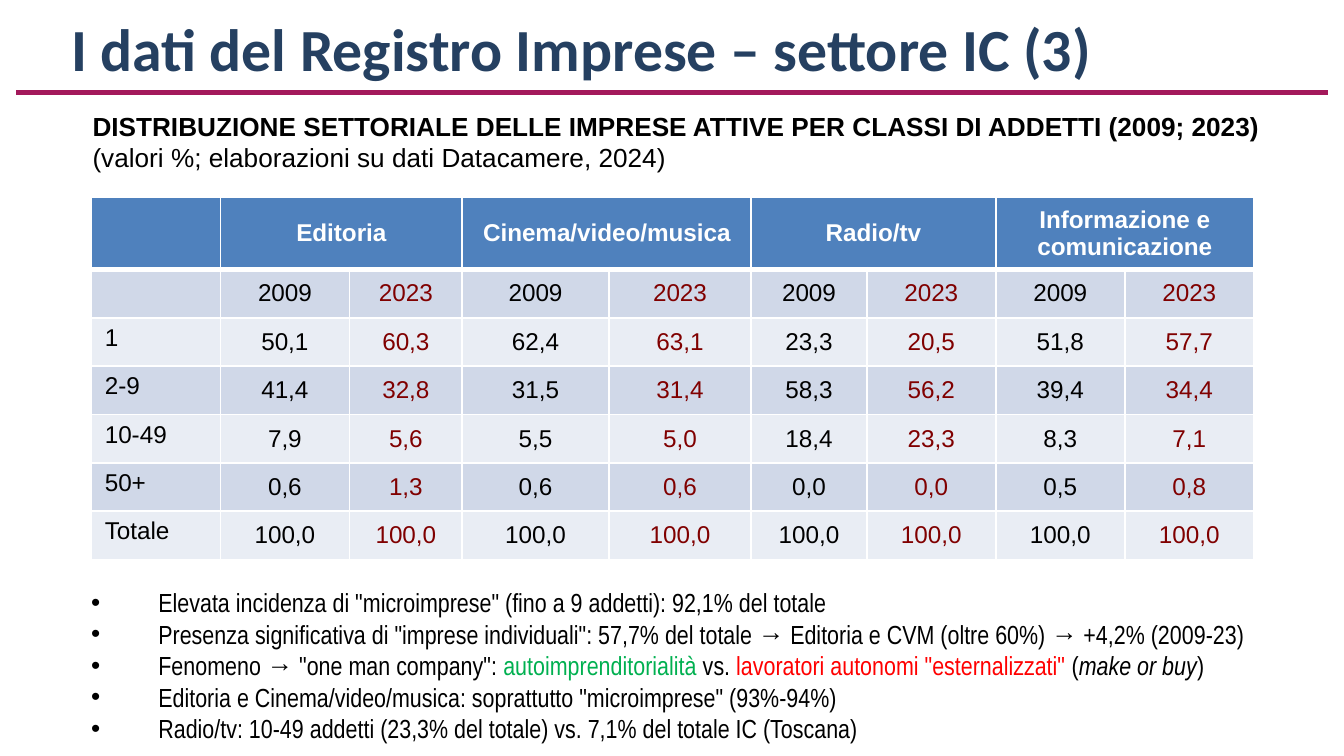
from lxml import etree
from pptx import Presentation
from pptx.dml.color import RGBColor
from pptx.enum.shapes import MSO_CONNECTOR
from pptx.enum.text import MSO_ANCHOR, PP_ALIGN
from pptx.oxml.ns import qn
from pptx.util import Inches, Pt

STRAIGHT = MSO_CONNECTOR.STRAIGHT
MIDDLE = MSO_ANCHOR.MIDDLE
CENTER = PP_ALIGN.CENTER

COLORS = {
    "title": "254061", "rule": "A3195B", "black": "000000", "white": "FFFFFF",
    "header": "4F81BD", "dark band": "D0D8E8", "light band": "E9EDF4",
    "2023": "800000", "green": "00B050", "red": "FF0000",
}


def add_span(para, text, size, font, color="black", bold=False, italic=False):
    span = para.add_run()
    span.text = text
    span.font.size = Pt(size)
    span.font.name = font
    span.font.bold = bold
    span.font.italic = italic
    span.font.color.rgb = RGBColor.from_string(COLORS[color])


def add_box(left, top, width, height):
    box = slide.shapes.add_textbox(Inches(left), Inches(top), Inches(width), Inches(height))
    box.text_frame.word_wrap = True
    return box.text_frame


# 16:9 deck
deck = Presentation()
deck.slide_width = Inches(10)
deck.slide_height = Inches(10 * 9 / 16)
slide = deck.slides.add_slide(deck.slide_layouts[6])

# Title and rule
rule = slide.shapes.add_connector(STRAIGHT, Inches(0.12), Inches(0.69), Inches(9.88), Inches(0.69))
rule.line.color.rgb = RGBColor.from_string(COLORS["rule"])
rule.line.width = Pt(2.5)
etree.SubElement(rule._element.spPr, qn("a:effectLst"))

title = add_box(0.43, 0.04, 9.29, 0.64)
add_span(title.paragraphs[0], "I dati del Registro Imprese – settore IC (3)", 32, "Calibri", "title", bold=True)

# Table heading
heading = add_box(0.59, 0.77, 8.98, 0.74)
add_span(heading.paragraphs[0],
         "DISTRIBUZIONE SETTORIALE DELLE IMPRESE ATTIVE PER CLASSI DI ADDETTI (2009; 2023)",
         14, "Arial", bold=True)
add_span(heading.add_paragraph(), "(valori %; elaborazioni su dati Datacamere, 2024)", 14, "Arial")

# Table: each sector spans a 2009 and a 2023 column
sectors = ["Editoria", "Cinema/video/musica", "Radio/tv", "Informazione e comunicazione"]
header = [""]
for sector in sectors:
    header += [sector, ""]
rows = [
    header,
    [""] + ["2009", "2023"] * len(sectors),
    ["1", "50,1", "60,3", "62,4", "63,1", "23,3", "20,5", "51,8", "57,7"],
    ["2-9", "41,4", "32,8", "31,5", "31,4", "58,3", "56,2", "39,4", "34,4"],
    ["10-49", "7,9", "5,6", "5,5", "5,0", "18,4", "23,3", "8,3", "7,1"],
    ["50+", "0,6", "1,3", "0,6", "0,6", "0,0", "0,0", "0,5", "0,8"],
    ["Totale"] + ["100,0"] * 8,
]
widths = [0.96, 0.96, 0.84, 1.09, 1.06, 0.86, 0.96, 0.96, 0.96]
table = slide.shapes.add_table(len(rows), len(widths), Inches(0.68), Inches(1.47),
                               Inches(8.65), Inches(2.68)).table
for column, width in zip(table.columns, widths):
    column.width = Inches(width)

for row_index, row in enumerate(rows):
    is_header = row_index == 0
    table.rows[row_index].height = Inches(0.52 if is_header else 0.36)
    band = "header" if is_header else "dark band" if row_index % 2 else "light band"
    thick_side = {0: "lnB", 1: "lnT"}.get(row_index)
    for column_index, text in enumerate(row):
        cell = table.cell(row_index, column_index)
        for side in ("lnL", "lnR", "lnT", "lnB"):
            border = etree.SubElement(cell._tc.get_or_add_tcPr(), qn(f"a:{side}"),
                                      w=str(Pt(3 if side == thick_side else 1)))
            fill = etree.SubElement(border, qn("a:solidFill"))
            etree.SubElement(fill, qn("a:srgbClr"), val=COLORS["white"])
        cell.fill.solid()
        cell.fill.fore_color.rgb = RGBColor.from_string(COLORS[band])
        if not text:
            cell.margin_top = cell.margin_bottom = Inches(0.02)
            continue
        para = cell.text_frame.paragraphs[0]
        if column_index:
            cell.vertical_anchor = MIDDLE
            para.alignment = CENTER
        is_2023 = column_index > 0 and column_index % 2 == 0
        color = "white" if is_header else "2023" if is_2023 else "black"
        add_span(para, text, 13, "Arial", color, bold=is_header)

for first in range(1, len(widths), 2):
    table.cell(0, first).merge(table.cell(0, first + 1))

# Comments: (text, colour, italic) spans for each bullet
comments = [
    [("Elevata incidenza di \"microimprese\" (fino a 9 addetti): 92,1% del totale", "black", False)],
    [("Presenza significativa di \"imprese individuali\": 57,7% del totale → "
      "Editoria e CVM (oltre 60%) → +4,2% (2009-23)", "black", False)],
    [("Fenomeno → \"one man company\": ", "black", False),
     ("autoimprenditorialità", "green", False),
     (" vs. ", "black", False),
     ("lavoratori autonomi \"esternalizzati\"", "red", False),
     (" (", "black", False),
     ("make or buy", "black", True),
     (")", "black", False)],
    [("Editoria e Cinema/video/musica: soprattutto \"microimprese\" (93%-94%)", "black", False)],
    [("Radio/tv: 10-49 addetti (23,3% del totale) vs. 7,1% del totale IC (Toscana)", "black", False)],
]
notes = add_box(0.58, 4.31, 9.58, 1.28)
notes.vertical_anchor = MIDDLE
for index, comment in enumerate(comments):
    para = notes.add_paragraph() if index else notes.paragraphs[0]
    properties = para._p.get_or_add_pPr()
    properties.set("marL", str(Inches(0.5)))
    properties.set("indent", str(-Inches(0.5)))
    etree.SubElement(properties, qn("a:buFont"), typeface="Arial")
    etree.SubElement(properties, qn("a:buChar"), char="•")
    for text, color, italic in comment:
        add_span(para, text, 14, "Arial Narrow", color, italic=italic)

deck.save("out.pptx")
